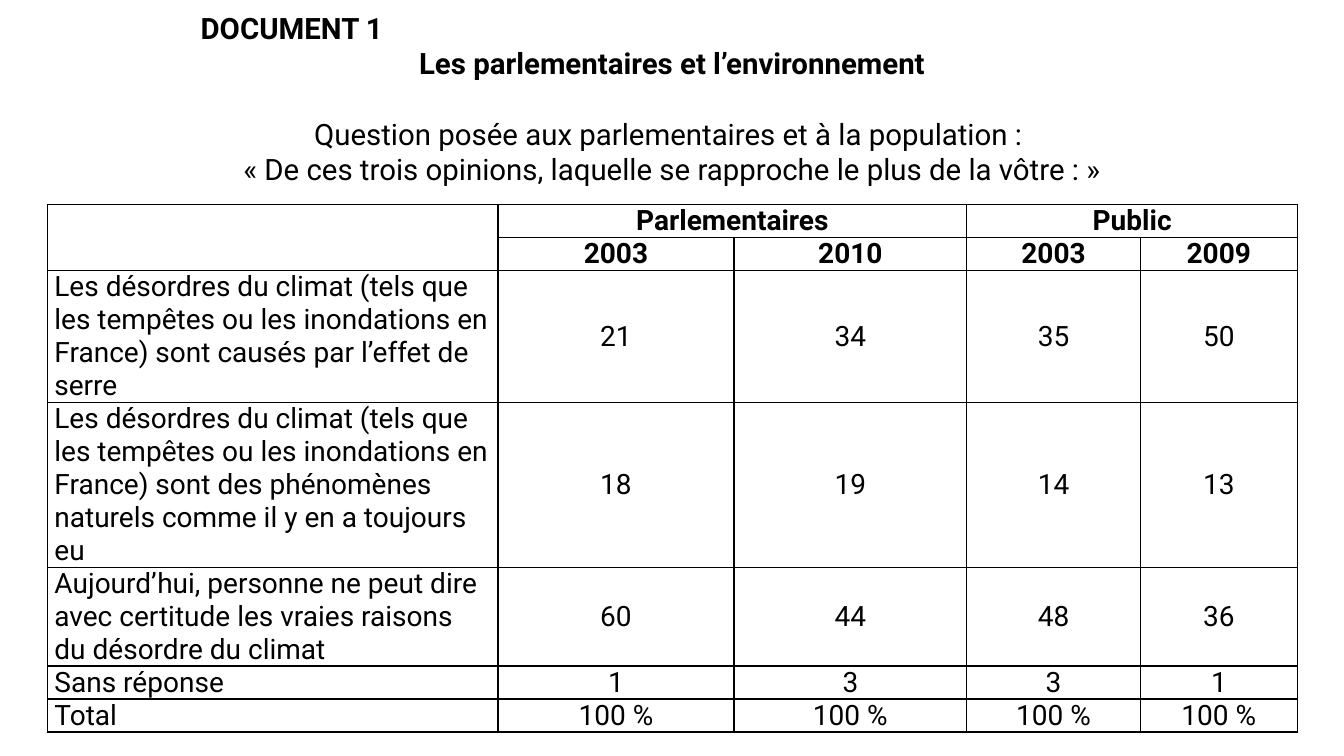
from dataclasses import dataclass

from lxml.etree import SubElement
from pptx import Presentation
from pptx.dml.color import RGBColor
from pptx.enum.text import MSO_ANCHOR as Anchor, MSO_AUTO_SIZE as AutoSize, PP_ALIGN as Align
from pptx.oxml.ns import qn
from pptx.util import Inches, Pt


@dataclass(frozen=True)
class Theme:
    font: str = "Roboto"
    ink: RGBColor = RGBColor(0, 0, 0)
    paper: RGBColor = RGBColor(255, 255, 255)
    heading_size: int = 21
    table_size: int = 20
    border: int = 1


THEME = Theme()

HEADING = [  # text, alignment, bold, space before in points
    ("DOCUMENT 1", Align.LEFT, True, 0),
    ("Les parlementaires et l’environnement", Align.CENTER, True, 0),
    ("Question posée aux parlementaires et à la population : ", Align.CENTER, False, 25),
    ("« De ces trois opinions, laquelle se rapproche le plus de la vôtre : »",
     Align.CENTER, False, 0),
]
GROUPS = ["", "Parlementaires", "", "Public", ""]
YEARS = ["", "2003", "2010", "2003", "2009"]
ANSWERS = [
    ["Les désordres du climat (tels que les tempêtes ou les inondations en France) "
     "sont causés par l’effet de serre", "21", "34", "35", "50"],
    ["Les désordres du climat (tels que les tempêtes ou les inondations en France) "
     "sont des phénomènes naturels comme il y en a toujours eu", "18", "19", "14", "13"],
    ["Aujourd’hui, personne ne peut dire avec certitude les vraies raisons "
     "du désordre du climat", "60", "44", "48", "36"],
    ["Sans réponse", "1", "3", "3", "1"],
    ["Total"] + ["100 %"] * 4,
]
HEADER_ROWS = 2
COLUMN_WIDTHS = [4.47, 2.34, 2.31, 1.72, 1.56]
ROW_LINES = [1, 1, 4, 5, 3, 1, 1]  # lines of text in each row


def style_paragraph(para, size, align, bold):
    para.alignment = align
    for run in para.runs:
        font = run.font
        font.name, font.size, font.bold = THEME.font, Pt(size), bold
        font.color.rgb = THEME.ink


def add_heading(page, box):
    title = page.shapes.title
    title.left, title.top, title.width, title.height = map(Inches, box)
    frame = title.text_frame
    frame.word_wrap = True
    frame.auto_size = AutoSize.NONE
    frame.vertical_anchor = Anchor.TOP
    frame.margin_left = frame.margin_right = Inches(0.05)
    frame.margin_top = frame.margin_bottom = Inches(0.05)
    frame.text = "\n".join(text for text, *_ in HEADING)
    for para, (_, align, bold, gap) in zip(frame.paragraphs, HEADING):
        style_paragraph(para, THEME.heading_size, align, bold)
        para.space_before = Pt(gap)


def add_borders(cell):
    properties = cell._tc.get_or_add_tcPr()
    for side in ("a:lnL", "a:lnR", "a:lnT", "a:lnB"):
        line = SubElement(properties, qn(side), w=str(Pt(THEME.border)))
        fill = SubElement(line, qn("a:solidFill"))
        SubElement(fill, qn("a:srgbClr"), val=str(THEME.ink))


def style_cell(cell, text, align, bold):
    cell.text = text
    style_paragraph(cell.text_frame.paragraphs[0], THEME.table_size, align, bold)
    cell.margin_left = cell.margin_right = Inches(0.07)
    cell.margin_top = cell.margin_bottom = 0
    cell.vertical_anchor = Anchor.MIDDLE
    add_borders(cell)
    cell.fill.background()


def add_survey_table(page, box):
    rows = [GROUPS, YEARS] + ANSWERS
    frame = page.shapes.add_table(len(rows), len(YEARS), *map(Inches, box))
    table = frame.table
    table.first_row = table.horz_banding = False

    # Columns, and rows in proportion to their lines of text
    for column, width in zip(table.columns, COLUMN_WIDTHS):
        column.width = Inches(width)
    line_height = box[3] / sum(ROW_LINES)
    for row, lines in zip(table.rows, ROW_LINES):
        row.height = Inches(lines * line_height)

    # Cell contents
    for r, values in enumerate(rows):
        for c, text in enumerate(values):
            align = Align.CENTER if c else Align.LEFT
            style_cell(table.cell(r, c), text, align, r < HEADER_ROWS)

    # Empty corner and the two group headings
    table.cell(0, 0).merge(table.cell(1, 0))
    for first in (1, 3):
        table.cell(0, first).merge(table.cell(0, first + 1))


def main():
    deck = Presentation()
    deck.slide_width, deck.slide_height = Inches(13.33), Inches(7.5)
    page = deck.slides.add_slide(deck.slide_layouts.get_by_name("Title Only"))
    page.background.fill.solid()
    page.background.fill.fore_color.rgb = THEME.paper
    add_heading(page, (1.94, 0.05, 9.45, 1.87))
    add_survey_table(page, (0.47, 2.03, sum(COLUMN_WIDTHS), 5.23))
    deck.save("out.pptx")


if __name__ == "__main__":
    main()
